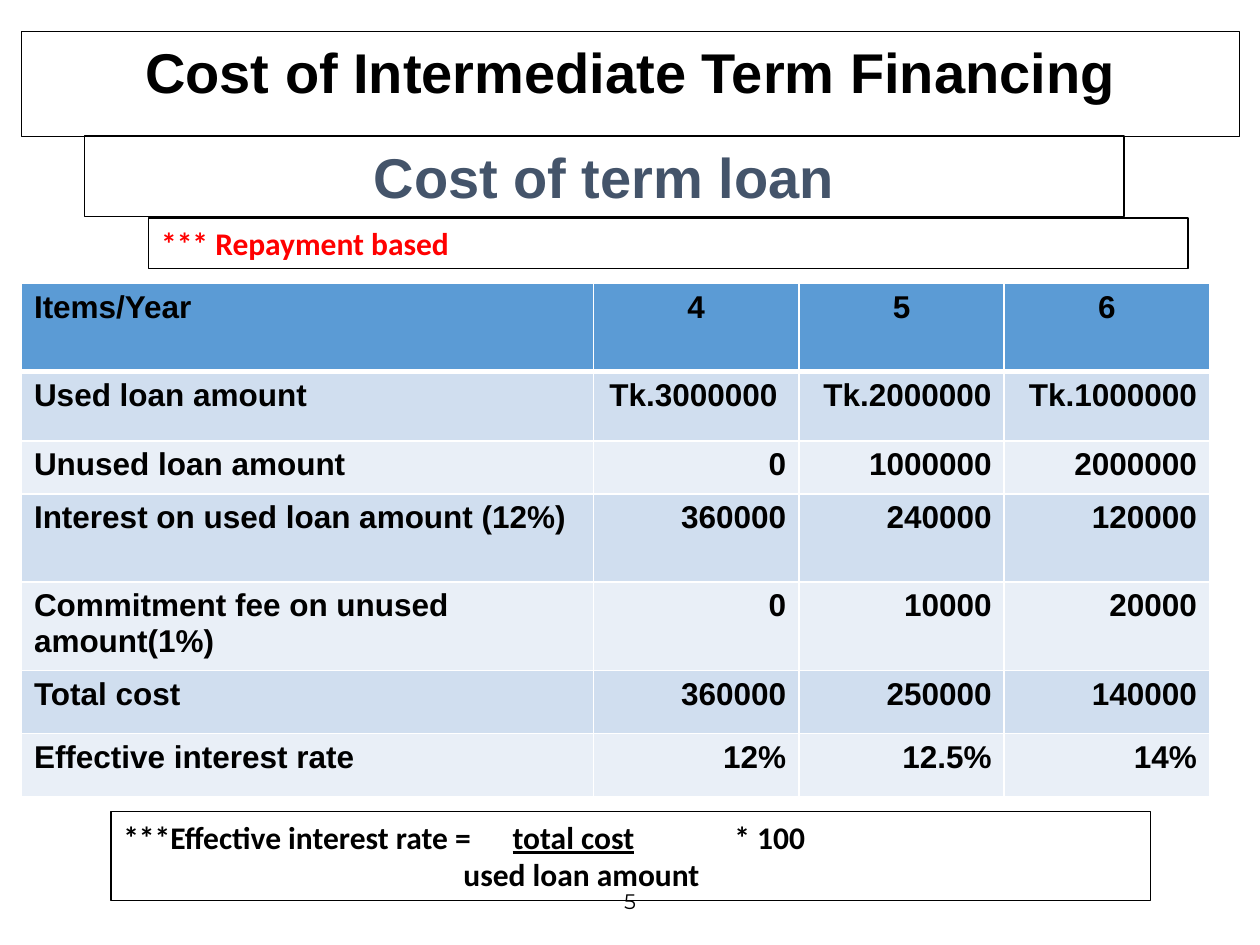
from lxml import etree
from pptx import Presentation
from pptx import util as u
from pptx.dml.color import RGBColor
from pptx.enum import shapes, text
from pptx.oxml.ns import qn

COLORS = {"black": "000000", "white": "FFFFFF", "slate": "44546A", "red": "FF0000",
          "header": "5B9BD5", "band": "D0DEEF", "light": "E9EFF7"}

TITLE = "Cost of Intermediate Term Financing"
TITLE_BOX = (0.17, 0.25, 9.67, 0.64)
# text, position, font, size, colour, alignment
BOXES = [
    ("Cost of term loan", (0.67, 1.08, 8.25, 0.64), "Arial", 32, "slate", "CENTER"),
    ("*** Repayment based", (1.18, 1.73, 8.25, 0.4), "Calibri", 18, "red", "LEFT"),
]
FORMULA_BOX = (0.88, 6.44, 8.25, 0.71)
# tab stops in inches, then runs of text and underline
FORMULA = [
    ((3.09, 4.85), [("***Effective interest rate =\t", False), ("total cost", True),
                    ("\t* 100", False)]),
    ((2.7,), [("\tused loan amount", False)]),
]
ROWS = [
    ("Items/Year", "4", "5", "6"),
    ("Used loan amount", "Tk.3000000 ", "Tk.2000000", "Tk.1000000"),
    ("Unused loan amount", "0", "1000000", "2000000"),
    ("Interest on used loan amount (12%)", "360000", "240000", "120000"),
    ("Commitment fee on unused amount(1%)", "0", "10000", "20000"),
    ("Total cost", "360000", "250000", "140000"),
    ("Effective interest rate", "12%", "12.5%", "14%"),
]
COL_WIDTHS = [4.54, 1.63, 1.63, 1.63]
ROW_HEIGHTS = [0.7, 0.55, 0.42, 0.7, 0.7, 0.5, 0.5]


def rgb(name):
    return RGBColor.from_string(COLORS[name])


def add_run(p, words, font, size, color="black", bold=True):
    r = p.add_run()
    r.text = words
    r.font.name, r.font.size, r.font.bold = font, u.Pt(size), bold
    r.font.color.rgb = rgb(color)
    return r


def outline(sp):
    sp.fill.background()
    sp.line.color.rgb = rgb("black")
    sp.line.width = u.Pt(0.75)
    tf = sp.text_frame
    tf.word_wrap = True
    tf.vertical_anchor = text.MSO_ANCHOR.TOP
    tf.auto_size = text.MSO_AUTO_SIZE.SHAPE_TO_FIT_TEXT
    return tf


def add_box(s, box):
    sp = s.shapes.add_shape(shapes.MSO_SHAPE.RECTANGLE, *map(u.Inches, box))
    sp.shadow.inherit = False
    return outline(sp)


def set_tabs(p, stops):
    tabs = etree.SubElement(p._p.get_or_add_pPr(), qn("a:tabLst"))
    for stop in stops:
        etree.SubElement(tabs, qn("a:tab"), pos=str(u.Inches(stop)), algn="l")


def set_borders(cell, widths):
    for side, width in widths.items():
        ln = etree.SubElement(cell._tc.get_or_add_tcPr(), qn("a:ln" + side),
                              w=str(u.Pt(width)))
        fill = etree.SubElement(ln, qn("a:solidFill"))
        etree.SubElement(fill, qn("a:srgbClr"), val=COLORS["white"])


def add_cost_table(s):
    frame = s.shapes.add_table(len(ROWS), len(COL_WIDTHS), u.Inches(0.17), u.Inches(2.25),
                               u.Inches(sum(COL_WIDTHS)), u.Inches(sum(ROW_HEIGHTS)))
    table = frame.table
    for col, width in zip(table.columns, COL_WIDTHS):
        col.width = u.Inches(width)
    for i, (row, height) in enumerate(zip(ROWS, ROW_HEIGHTS)):
        table.rows[i].height = u.Inches(height)
        for j, words in enumerate(row):
            cell = table.cell(i, j)
            set_borders(cell, {"L": 1, "R": 1, "T": 3 if i == 1 else 1,
                               "B": 3 if i == 0 else 1})
            cell.fill.solid()
            cell.fill.fore_color.rgb = rgb("header" if i == 0 else "band" if i % 2 else "light")
            p = cell.text_frame.paragraphs[0]
            if j:
                p.alignment = text.PP_ALIGN.RIGHT if i else text.PP_ALIGN.CENTER
            add_run(p, words, "Arial", 18)


def main():
    prs = Presentation()
    prs.slide_width, prs.slide_height = u.Inches(10), u.Inches(7.5)
    s = prs.slides.add_slide(prs.slide_layouts[5])

    # Page number
    sp = s.shapes.add_textbox(*map(u.Inches, (3.31, 6.95, 3.38, 0.4)))
    tf = sp.text_frame
    tf.word_wrap = True
    tf.vertical_anchor = text.MSO_ANCHOR.MIDDLE
    p = tf.paragraphs[0]
    p.alignment = text.PP_ALIGN.CENTER
    add_run(p, "5", "Montserrat", 12, bold=False)

    # Title
    title = s.shapes.title
    title.left, title.top, title.width, title.height = map(u.Inches, TITLE_BOX)
    p = outline(title).paragraphs[0]
    p.alignment = text.PP_ALIGN.CENTER
    add_run(p, TITLE, "Arial", 32)

    add_cost_table(s)

    # Subheadings
    for words, box, font, size, color, align in BOXES:
        p = add_box(s, box).paragraphs[0]
        p.alignment = text.PP_ALIGN[align]
        add_run(p, words, font, size, color)

    # Formula
    tf = add_box(s, FORMULA_BOX)
    for i, (stops, runs) in enumerate(FORMULA):
        p = tf.add_paragraph() if i else tf.paragraphs[0]
        p.alignment = text.PP_ALIGN.LEFT
        set_tabs(p, stops)
        for words, underline in runs:
            add_run(p, words, "Calibri", 18).font.underline = underline

    prs.save("out.pptx")


if __name__ == "__main__":
    main()
